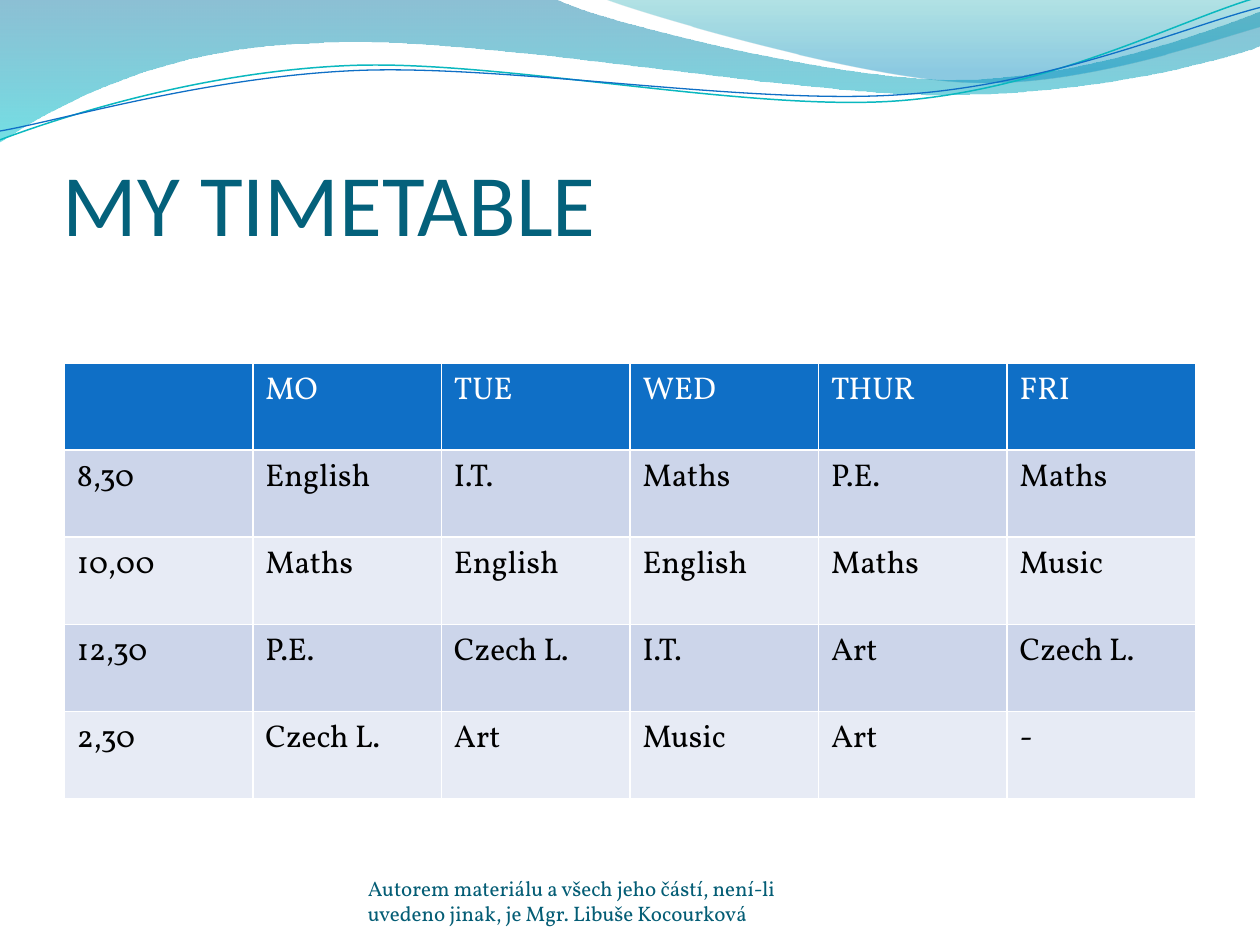
from dataclasses import dataclass
from math import cos, radians, sin
from typing import Optional

from lxml.etree import SubElement
from pptx import Presentation
from pptx.dml.color import RGBColor
from pptx.enum.text import MSO_ANCHOR
from pptx.oxml.ns import qn
from pptx.util import Emu, Inches, Pt

SLIDE_WIDTH, SLIDE_HEIGHT = Inches(10), Inches(7.5)


@dataclass(frozen=True)
class Theme:
    title: str = "04617B"
    footer: str = "045D75"
    header: str = "0F6FC6"
    teal: str = "0AB8BF"
    bands: tuple = ("CCD5EA", "E7EBF5")
    white: str = "FFFFFF"
    black: str = "000000"
    heading_font: str = "Calibri"
    body_font: str = "Vollkorn"
    title_size: float = 50
    table_size: float = 18
    footer_size: float = 12


THEME = Theme()


@dataclass(frozen=True)
class GradientStop:
    position: int
    color: str
    opacity: int


@dataclass(frozen=True)
class Wave:
    """An outline in inches: pairs are straight steps, sextuples are Bézier curves."""
    start: tuple
    steps: tuple
    gradient: tuple = ()
    line_color: Optional[str] = None
    line_width: float = 0
    tilt: float = 0
    center: tuple = (0, 0)


@dataclass(frozen=True)
class TextBlock:
    """Text in a frame given as shares of the slide's size."""
    text: str
    left: float
    top: float
    width: float
    height: float
    font: str
    size: float
    color: str
    vertical_inset: float = 0


WAVES = (
    Wave((0, 0), ((4.4, -0.01), (4.76, 0.17, 6.64, 0.63, 7.58, 0.63),
                  (8.53, 0.63, 9.58, 0.26, 10, 0.09), (10.01, 0.36),
                  (9.83, 0.44, 8.7, 0.76, 7.46, 0.75),
                  (6.22, 0.75, 3.82, 0.28, 2.57, 0.34),
                  (1.29, 0.36, 0.46, 0.83, -0.01, 1.13), (0, 0)),
         gradient=(GradientStop(0, "0074A1", 45), GradientStop(100, "00C6CF", 55))),
    Wave((4.79, -0.01), ((5.09, 0.11, 6.82, 0.62, 7.69, 0.65),
                         (8.56, 0.69, 9.61, 0.32, 10, 0.21), (10, 0), (4.79, -0.01)),
         gradient=(GradientStop(0, "00A1A9", 30), GradientStop(80, "008BBF", 45))),
    Wave((0, 1.11), ((0.48, 0.93, 1.58, 0.57, 2.77, 0.52),
                     (3.95, 0.47, 5.93, 0.89, 7.13, 0.8),
                     (8.33, 0.71, 9.38, 0.15, 9.98, -0.02)),
         line_color=THEME.teal, line_width=0.85, tilt=-2.7, center=(4.99, 0.58)),
    Wave((0, 1.04), ((0.47, 0.96, 1.64, 0.61, 2.83, 0.56),
                     (4.03, 0.51, 5.97, 0.84, 7.17, 0.75),
                     (8.36, 0.67, 9.41, 0.21, 10, 0.06)),
         line_color=THEME.header, line_width=0.75, tilt=-2.7, center=(5, 0.59)),
)

TEXT_BLOCKS = (
    TextBlock("MY TIMETABLE", 0.05, 0.102, 0.9, 0.167, THEME.heading_font,
              THEME.title_size, THEME.title, vertical_inset=0.05),
    TextBlock("Autorem materiálu a všech jeho částí, není-li uvedeno jinak, "
              "je Mgr. Libuše Kocourková", 0.292, 0.927, 0.367, 0.053,
              THEME.body_font, THEME.footer_size, THEME.footer),
)

TIMETABLE = (
    ("", "MO", "TUE", "WED", "THUR", "FRI"),
    ("8,30", "English", "I.T.", "Maths", "P.E.", "Maths"),
    ("10,00", "Maths", "English", "English", "Maths", "Music"),
    ("12,30", "P.E.", "Czech L.", "I.T.", "Art", "Czech L."),
    ("2,30", "Czech L.", "Art", "Music", "Art", "-"),
)


def set_attributes(target, values: dict) -> None:
    for name, value in values.items():
        setattr(target, name, value)


def write_text(paragraph, text: str, font: str, size: float, color: str) -> None:
    run = paragraph.add_run()
    run.text = text
    set_attributes(run.font, {"name": font, "size": Pt(size), "bold": False})
    run.font.color.rgb = RGBColor.from_string(color)


def level_point(point: tuple, wave: Wave) -> tuple:
    """The point's place before the wave is tilted around its center."""
    angle = radians(-wave.tilt)
    x, y = (value - middle for value, middle in zip(point, wave.center))
    return (Inches(wave.center[0] + x * cos(angle) - y * sin(angle)),
            Inches(wave.center[1] + x * sin(angle) + y * cos(angle)))


def bend_segments(shape, steps: tuple) -> None:
    """Join each curve's three straight segments into one Bézier curve."""
    segments = iter(list(shape.element.iter(qn("a:lnTo"))))
    for step in steps:
        first = next(segments)
        if len(step) == 6:
            outline = first.getparent()
            curve = SubElement(outline, qn("a:cubicBezTo"))
            outline.replace(first, curve)
            curve.append(first[0])
            for segment in (next(segments), next(segments)):
                curve.append(segment[0])
                outline.remove(segment)


def fill_gradient(shape, stops: tuple) -> None:
    """Downward gradient with an opacity for each stop."""
    shape.fill.gradient()
    gradient = shape.element.spPr.find(qn("a:gradFill"))
    for child in list(gradient):
        gradient.remove(child)
    stop_list = SubElement(gradient, qn("a:gsLst"))
    for stop in stops:
        entry = SubElement(stop_list, qn("a:gs"), pos=str(stop.position * 1000))
        color = SubElement(entry, qn("a:srgbClr"), val=stop.color)
        SubElement(color, qn("a:alpha"), val=str(stop.opacity * 1000))
    SubElement(gradient, qn("a:lin"), ang="5400000", scaled="0")


def draw_wave(slide, wave: Wave) -> None:
    points = [wave.start]
    for step in wave.steps:
        points += zip(step[::2], step[1::2])
    vertices = [level_point(point, wave) for point in points]
    builder = slide.shapes.build_freeform(*vertices[0])
    builder.add_line_segments(vertices[1:], close=bool(wave.gradient))
    shape = builder.convert_to_shape()
    bend_segments(shape, wave.steps)
    shape.rotation = wave.tilt
    shape.shadow.inherit = False
    if wave.gradient:
        fill_gradient(shape, wave.gradient)
        shape.line.fill.background()
    else:
        shape.fill.background()
        shape.line.color.rgb = RGBColor.from_string(wave.line_color)
        shape.line.width = Pt(wave.line_width)


def draw_text(slide, block: TextBlock) -> None:
    shape = slide.shapes.add_textbox(
        Emu(int(block.left * SLIDE_WIDTH)), Emu(int(block.top * SLIDE_HEIGHT)),
        Emu(int(block.width * SLIDE_WIDTH)), Emu(int(block.height * SLIDE_HEIGHT)))
    set_attributes(shape.text_frame, {
        "word_wrap": True, "vertical_anchor": MSO_ANCHOR.BOTTOM,
        "margin_left": 0, "margin_right": 0,
        "margin_top": Inches(block.vertical_inset), "margin_bottom": 0})
    write_text(shape.text_frame.paragraphs[0], block.text, block.font, block.size, block.color)


def draw_timetable(slide, rows: tuple) -> None:
    """The default table style supplies the white rules between cells."""
    column_width, row_height = Inches(8.98 / len(rows[0])), Inches(3.46 / len(rows))
    table = slide.shapes.add_table(
        len(rows), len(rows[0]), Inches(0.51), Inches(2.88),
        column_width * len(rows[0]), row_height * len(rows)).table
    for row_index, row in enumerate(rows):
        is_header = row_index == 0
        fill = THEME.header if is_header else THEME.bands[(row_index - 1) % 2]
        color = THEME.white if is_header else THEME.black
        for column_index, text in enumerate(row):
            cell = table.cell(row_index, column_index)
            cell.fill.solid()
            cell.fill.fore_color.rgb = RGBColor.from_string(fill)
            if text:
                write_text(cell.text_frame.paragraphs[0], text,
                           THEME.body_font, THEME.table_size, color)


def main() -> None:
    presentation = Presentation()
    set_attributes(presentation, {"slide_width": SLIDE_WIDTH, "slide_height": SLIDE_HEIGHT})
    slide = presentation.slides.add_slide(presentation.slide_layouts[6])
    # Waves along the top edge
    for wave in WAVES:
        draw_wave(slide, wave)
    # Title and footer
    for block in TEXT_BLOCKS:
        draw_text(slide, block)
    # Lessons by day and time
    draw_timetable(slide, TIMETABLE)
    presentation.save("out.pptx")


if __name__ == "__main__":
    main()
